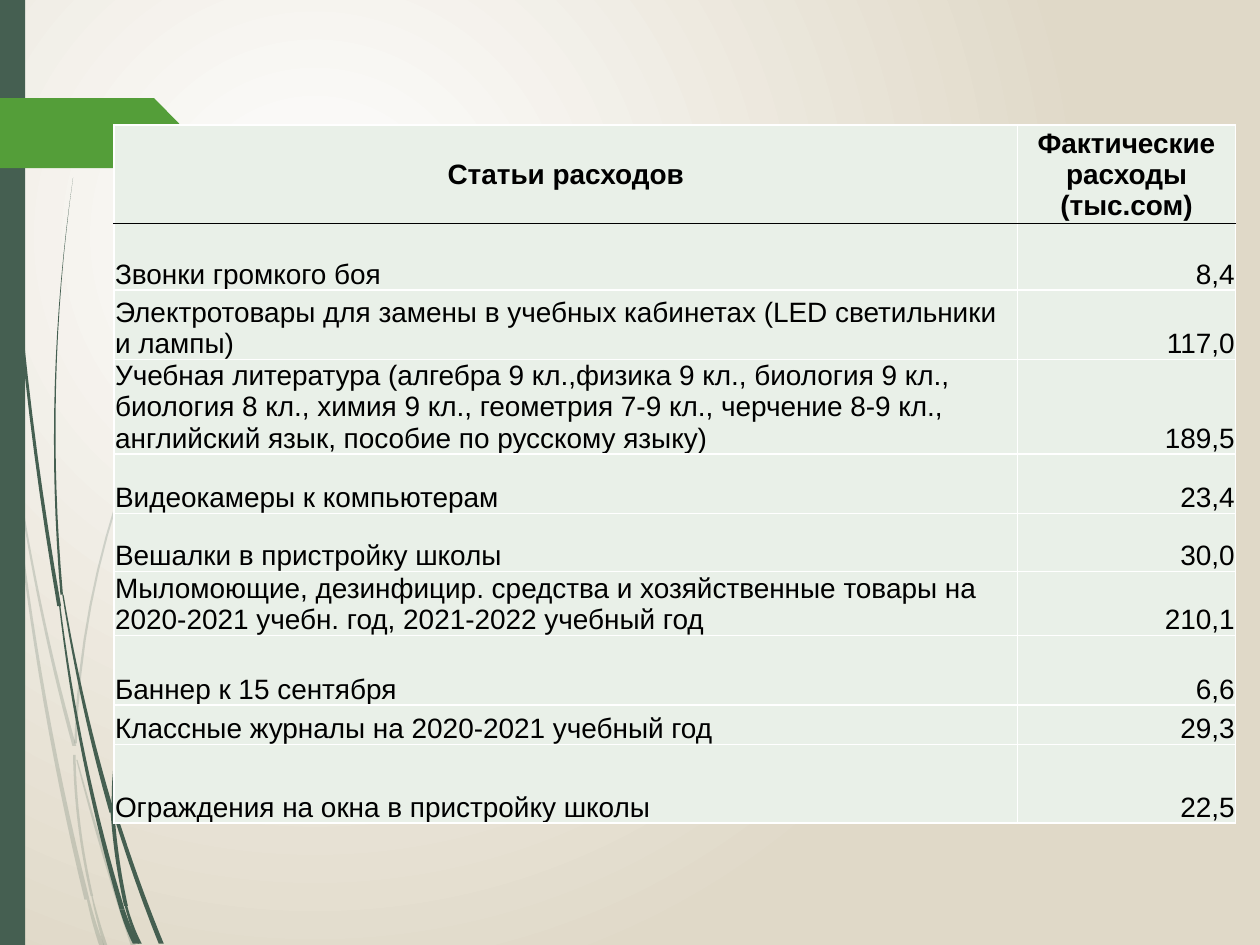
from lxml import etree
from pptx import Presentation
from pptx.dml.color import RGBColor
from pptx.enum.shapes import MSO_SHAPE
from pptx.enum.text import MSO_ANCHOR, PP_ALIGN
from pptx.oxml import parse_xml
from pptx.oxml.ns import nsdecls, qn
from pptx.util import Cm, Pt

RECT, PENTAGON = MSO_SHAPE.RECTANGLE, MSO_SHAPE.PENTAGON
MIDDLE, BOTTOM = MSO_ANCHOR.MIDDLE, MSO_ANCHOR.BOTTOM
LEFT, CENTER, RIGHT = PP_ALIGN.LEFT, PP_ALIGN.CENTER, PP_ALIGN.RIGHT
COLORS = {"white": "FFFFFF", "sand": "E0D9C8", "pine": "455F51",
          "green": "549E39", "cell": "E9F0E8", "black": "000000"}


def put_text(cell, text, align=LEFT, anchor=BOTTOM, size=16, bold=False,
             font="Arial", color="black"):
    cell.margin_left = cell.margin_right = cell.margin_top = Cm(0.02)
    cell.margin_bottom = 0
    cell.vertical_anchor = anchor
    p = cell.text_frame.paragraphs[0]
    p.alignment = align
    r = p.add_run()
    r.text = text
    r.font.size, r.font.bold, r.font.name = Pt(size), bold, font
    r.font.color.rgb = RGBColor.from_string(COLORS[color])


def paint(sp, color, alpha=100):
    sp.shadow.inherit = False
    sp.line.fill.background()
    sp.fill.solid()
    sp.fill.fore_color.rgb = RGBColor.from_string(COLORS[color])
    if alpha < 100:
        clr = sp.element.spPr.find(qn("a:solidFill"))[0]
        etree.SubElement(clr, qn("a:alpha")).set("val", str(alpha * 1000))


prs = Presentation()
prs.slide_width, prs.slide_height = Cm(25.4), Cm(19.05)
s = prs.slides.add_slide(prs.slide_layouts[6])

# Background: radial glow from the upper left
bg = s.background.fill
bg.gradient()
for stop, name in zip(bg.gradient_stops, ("white", "sand")):
    stop.color.rgb = RGBColor.from_string(COLORS[name])
grad = s.element.find(".//" + qn("a:gradFill"))
grad.replace(grad.find(qn("a:lin")), parse_xml(
    f'<a:path {nsdecls("a")} path="circle"><a:fillToRect l="50000" t="50000"'
    ' r="100000" b="100000"/></a:path>'))

# Grass: each strand is a chain of blades. A blade runs from its top through
# its middle to its foot, and widens from the first width to the second.
# Unit: 1/100 inch.
GRASS_UNIT = Cm(2.54) / 100
STEPS = 16
pale_strands = {
    "outer": [((0, 290), (4, 320), (8, 350), 3, 1),
              ((8, 350), (32, 535), (69, 714), 1, 4),
              ((70, 714), (75, 733), (81, 751), 2, 4)],
    "inner": [((10, 352), (31, 475), (59, 592), 1, 3),
              ((61, 603), (82, 677), (106, 751), 1, 4)],
    "branch": [((217, 153), (102, 371), (60, 590), 1, 2),
               ((59, 599), (63, 655), (73, 711), 2, 2),
               ((73, 711), (78, 731), (84, 751), 1, 3)],
}
dark_strands = {
    "outer": [((3, 0), (15, 240), (47, 481), 1, 3),
              ((47, 477), (67, 602), (97, 722), 1, 4),
              ((97, 722), (102, 736), (108, 749), 4, 5)],
    "inner": [((58, 141), (44, 306), (49, 472), 0, 2),
              ((50, 472), (67, 560), (89, 645), 1, 4),
              ((91, 645), (109, 699), (128, 749), 3, 4)],
    "branch": [((216, 344), (121, 492), (90, 640), 1, 3),
               ((89, 640), (93, 680), (100, 719), 3, 3),
               ((100, 719), (105, 735), (111, 749), 2, 3)],
}
for strands, alpha in ((pale_strands, 20), (dark_strands, 100)):
    for blades in strands.values():
        for (x0, y0), (xm, ym), (x1, y1), w0, w1 in blades:
            # Control point that makes the quadratic curve pass the middle
            cx, cy = 2 * xm - (x0 + x1) / 2, 2 * ym - (y0 + y1) / 2
            left_edge, right_edge = [], []
            for i in range(STEPS + 1):
                t = i / STEPS
                a, b, c = (1 - t) ** 2, 2 * t * (1 - t), t * t
                x, y = a * x0 + b * cx + c * x1, a * y0 + b * cy + c * y1
                half = (w0 + (w1 - w0) * t) / 2
                left_edge.append(((x - half) * GRASS_UNIT, y * GRASS_UNIT))
                right_edge.append(((x + half) * GRASS_UNIT, y * GRASS_UNIT))
            fb = s.shapes.build_freeform(*left_edge[0])
            fb.add_line_segments(left_edge[1:] + right_edge[::-1], close=True)
            paint(fb.convert_to_shape(), "pine", alpha)

# Side bar and the pointer across it
bar = s.shapes.add_shape(RECT, 0, 0, Cm(0.51), prs.slide_height)
paint(bar, "pine")
pointer = s.shapes.add_shape(PENTAGON, 0, Cm(1.98), Cm(3.8), Cm(1.41))
pointer.adjustments[0] = 0.49
paint(pointer, "green")

# Expense table: item, amount, row height in cm
rows = [
    ("Статьи расходов", "Фактические расходы (тыс.сом)", 1.99),
    ("Звонки громкого боя", "8,4", 1.34),
    ("Электротовары для замены в учебных кабинетах (LED светильники и лампы)",
     "117,0", 1.4),
    ("Учебная литература (алгебра 9 кл.,физика 9 кл., биология 9 кл., "
     "биология 8 кл., химия 9 кл., геометрия 7-9 кл., черчение 8-9 кл., "
     "английский язык, пособие по русскому языку)", "189,5", 1.9),
    ("Видеокамеры к компьютерам", "23,4", 1.2),
    ("Вешалки в пристройку школы", "30,0", 1.17),
    ("Мыломоющие, дезинфицир. средства и хозяйственные товары на "
     "2020-2021 учебн. год, 2021-2022 учебный год", "210,1", 1.29),
    ("Баннер к 15 сентября", "6,6", 1.4),
    ("Классные журналы на 2020-2021 учебный год", "29,3", 0.8),
    ("Ограждения на окна в пристройку школы", "22,5", 1.58),
]
widths = (18.21, 4.4)
height = sum(row[2] for row in rows)
tbl = s.shapes.add_table(len(rows), len(widths), Cm(2.3), Cm(2.52),
                         Cm(sum(widths)), Cm(height)).table
tbl.first_row = tbl.horz_banding = False
for col, width in zip(tbl.columns, widths):
    col.width = Cm(width)

for i, (item, amount, row_height) in enumerate(rows):
    tbl.rows[i].height = Cm(row_height)
    for j, text in enumerate((item, amount)):
        cell = tbl.cell(i, j)
        if i == 0:
            put_text(cell, text, align=CENTER, anchor=MIDDLE, bold=True)
        else:
            put_text(cell, text, align=RIGHT if j else LEFT)
        cell.fill.solid()
        cell.fill.fore_color.rgb = RGBColor.from_string(COLORS["cell"])
        # Borders: white grid with a black rule under the header
        for k, side in enumerate("LRTB"):
            dark = (i, side) in ((0, "B"), (1, "T"))
            color = COLORS["black" if dark else "white"]
            cell._tc.get_or_add_tcPr().insert(k, parse_xml(
                f'<a:ln{side} {nsdecls("a")} w="12700"><a:solidFill>'
                f'<a:srgbClr val="{color}"/></a:solidFill></a:ln{side}>'))

prs.save("out.pptx")
